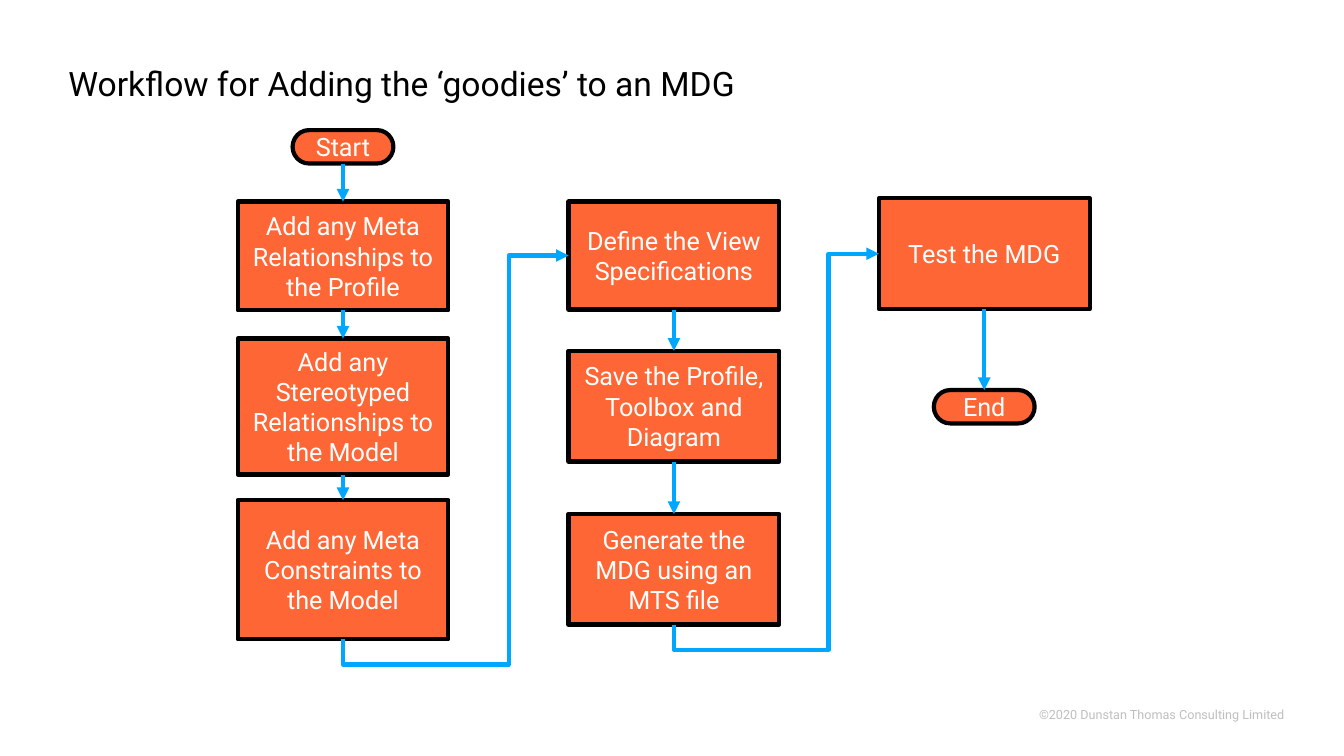
from lxml import etree
from pptx import Presentation
from pptx.dml.color import RGBColor
from pptx.enum.shapes import MSO_CONNECTOR, MSO_SHAPE
from pptx.enum.text import MSO_ANCHOR, PP_ALIGN
from pptx.oxml.ns import qn
from pptx.util import Cm, Pt

STEP, TERMINATOR = MSO_SHAPE.FLOWCHART_PROCESS, MSO_SHAPE.FLOWCHART_TERMINATOR
STRAIGHT, ELBOW = MSO_CONNECTOR.STRAIGHT, MSO_CONNECTOR.ELBOW
TOP, MIDDLE = MSO_ANCHOR.TOP, MSO_ANCHOR.MIDDLE
LEFT, CENTER, RIGHT = PP_ALIGN.LEFT, PP_ALIGN.CENTER, PP_ALIGN.RIGHT

ORANGE = RGBColor(0xFF, 0x66, 0x35)
BLUE = RGBColor(0x01, 0xA6, 0xFF)
BLACK = RGBColor(0, 0, 0)
WHITE = RGBColor(0xFF, 0xFF, 0xFF)
GREY = RGBColor(0xBF, 0xBF, 0xBF)
FONT = "Roboto"

# Connection sites of the flowchart shapes
SITE_TOP, SITE_LEFT, SITE_BOTTOM = 0, 1, 2

COLUMN_WIDTH = Cm(5.31)
TERMINATOR_WIDTH = Cm(2.54)
TURN_DROP = Cm(0.64)

# Each column: left, then (preset, top, height, label) from top to bottom
COLUMNS = [
    (5.99, [(TERMINATOR, 3.28, 0.84, "Start"),
            (STEP, 5.08, 2.74, "Add any Meta Relationships to the Profile"),
            (STEP, 8.53, 3.43, "Add any Stereotyped Relationships to the Model"),
            (STEP, 12.6, 3.51, "Add any Meta Constraints to the Model")]),
    (14.33, [(STEP, 5.08, 2.72, "Define the View Specifications"),
             (STEP, 8.84, 2.79, "Save the Profile, Toolbox and Diagram"),
             (STEP, 12.95, 2.79, "Generate the MDG using an MTS file")]),
    (22.15, [(STEP, 5, 2.79, "Test the MDG"),
             (TERMINATOR, 9.83, 0.84, "End")]),
]
# Gap between each turning line and the column it enters
TURN_GAPS = [Cm(1.51), Cm(1.27)]


def write(frame, text, size=18, color=WHITE, align=CENTER, anchor=MIDDLE, spacing=1.0):
    frame.word_wrap = True
    frame.vertical_anchor = anchor
    paragraph = frame.paragraphs[0]
    paragraph.alignment = align
    paragraph.line_spacing = spacing
    run = paragraph.add_run()
    run.text = text
    run.font.name = FONT
    run.font.size = Pt(size)
    run.font.color.rgb = color


def add_title(slide, left, top, width, height):
    title = slide.shapes.title
    title.left, title.top, title.width, title.height = left, top, width, height
    write(title.text_frame, "Workflow for Adding the ‘goodies’ to an MDG",
          size=24, color=BLACK, align=LEFT, anchor=TOP, spacing=0.9)


def add_copyright(slide, left, top, width, height):
    frame = slide.shapes.add_textbox(left, top, width, height).text_frame
    frame.margin_left = frame.margin_right = 0
    write(frame, "©2020 Dunstan Thomas Consulting Limited",
          size=9, color=GREY, align=RIGHT, anchor=TOP)


def add_node(slide, preset, left, top, width, height, label):
    node = slide.shapes.add_shape(preset, left, top, width, height)
    node.shadow.inherit = False
    node.fill.solid()
    node.fill.fore_color.rgb = ORANGE
    node.line.color.rgb = BLACK
    node.line.width = Pt(3)
    write(node.text_frame, label)
    return node


def add_arrow(slide, kind, source, target, target_site):
    arrow = slide.shapes.add_connector(kind, 0, 0, 0, 0)
    arrow.begin_connect(source, SITE_BOTTOM)
    arrow.end_connect(target, target_site)
    arrow.line.color.rgb = BLUE
    arrow.line.width = Pt(3)
    etree.SubElement(arrow.line._get_or_add_ln(), qn("a:tailEnd"), type="triangle")
    etree.SubElement(arrow._element.spPr, qn("a:effectLst"))
    return arrow


def add_turn(slide, source, target, gap):
    """Lead from the foot of one column up to the head of the next."""
    arrow = add_arrow(slide, ELBOW, source, target, SITE_LEFT)
    start_x, start_y = arrow.begin_x, arrow.begin_y
    end_x, end_y = arrow.end_x, arrow.end_y
    run, rise = end_x - start_x, start_y - end_y

    # The frame is stored unrotated, about the same centre
    arrow.left = (start_x + end_x - rise) // 2
    arrow.top = (start_y + end_y - run) // 2
    arrow.width, arrow.height = rise, run
    properties = arrow._element.spPr
    frame = properties.find(qn("a:xfrm"))
    for name, value in (("rot", "5400000"), ("flipH", "1"), ("flipV", "1")):
        frame.set(name, value)

    # Bends: below the source, then beside the target
    geometry = properties.find(qn("a:prstGeom"))
    geometry.set("prst", "bentConnector4")
    bends = geometry.find(qn("a:avLst"))
    for name, share in (("adj1", -TURN_DROP / rise), ("adj2", (run - gap) / run)):
        etree.SubElement(bends, qn("a:gd"), name=name, fmla=f"val {round(share * 100000)}")


def add_column(slide, left, steps):
    nodes = []
    for preset, top, height, label in steps:
        width = COLUMN_WIDTH if preset == STEP else TERMINATOR_WIDTH
        inset = (COLUMN_WIDTH - width) // 2
        nodes.append(add_node(slide, preset, left + inset, Cm(top), width, Cm(height), label))
    for source, target in zip(nodes, nodes[1:]):
        add_arrow(slide, STRAIGHT, source, target, SITE_TOP)
    return nodes


def main():
    deck = Presentation()
    deck.slide_width, deck.slide_height = Cm(33.87), Cm(19.05)
    slide = deck.slides.add_slide(deck.slide_layouts[5])

    add_copyright(slide, Cm(19.69), Cm(17.68), Cm(12.67), Cm(0.64))
    add_title(slide, Cm(1.47), Cm(1.57), Cm(30.63), Cm(1.3))

    # Workflow columns and the turns between them
    columns = [add_column(slide, Cm(left), steps) for left, steps in COLUMNS]
    for before, after, gap in zip(columns, columns[1:], TURN_GAPS):
        add_turn(slide, before[-1], after[0], gap)

    deck.save("out.pptx")


if __name__ == "__main__":
    main()
